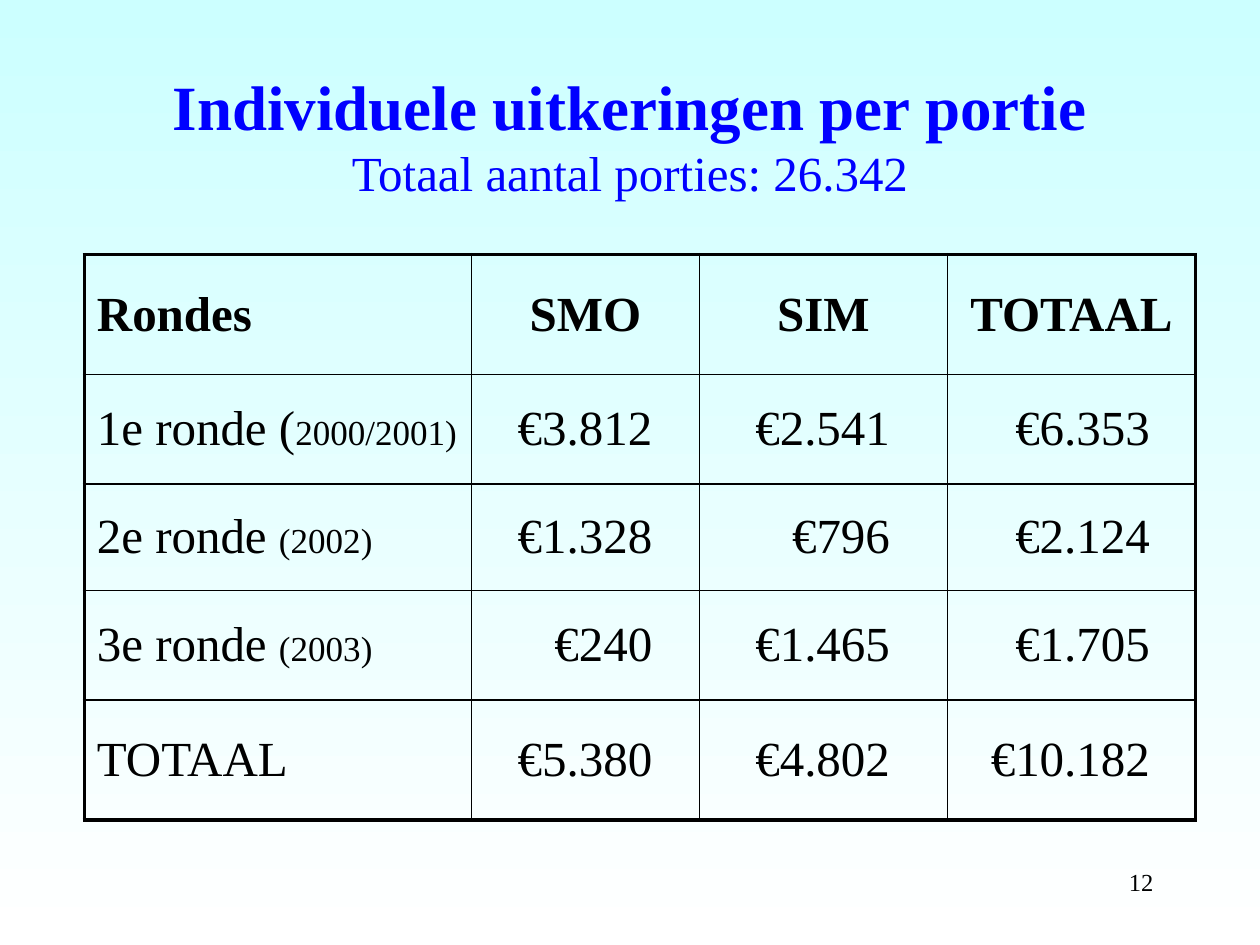
"""Build the slide on individual payouts per portion."""
from dataclasses import dataclass

from lxml import etree
from pptx import Presentation
from pptx.dml.color import RGBColor
from pptx.enum.text import MSO_ANCHOR, PP_ALIGN
from pptx.oxml.ns import qn
from pptx.slide import Slide
from pptx.table import Table, _Cell
from pptx.text.text import _Paragraph, _Run
from pptx.util import Cm, Pt

LEFT, CENTER, RIGHT = PP_ALIGN.LEFT, PP_ALIGN.CENTER, PP_ALIGN.RIGHT
TOP, MIDDLE = MSO_ANCHOR.TOP, MSO_ANCHOR.MIDDLE


@dataclass(frozen=True)
class Theme:
    font: str = "Times New Roman"
    ink: str = "000000"
    title: str = "0000FF"
    sky: str = "CCFFFF"
    ground: str = "FFFFFF"
    title_size: int = 36
    body_size: int = 28
    period_size: int = 20
    number_size: int = 14
    outer_line: float = 2.25
    inner_line: float = 1


@dataclass(frozen=True)
class Column:
    heading: str
    width: float
    right_margin: float
    align: PP_ALIGN
    heading_align: PP_ALIGN = CENTER


@dataclass(frozen=True)
class Round:
    label: str
    period: str
    amounts: tuple[str, ...]


THEME = Theme()
COLUMNS = (
    Column("Rondes", 7.8, 0.25, LEFT, LEFT),
    Column("SMO", 4.6, 0.95, RIGHT),
    Column("SIM", 5, 1.16, RIGHT),
    Column("TOTAAL", 5, 0.92, RIGHT),
)
ROUNDS = (
    Round("1e ronde (", "2000/2001)", ("€3.812", "€2.541", "€6.353")),
    Round("2e ronde ", "(2002)", ("€1.328", "€796", "€2.124")),
    Round("3e ronde ", "(2003)", ("€240", "€1.465", "€1.705")),
    Round("TOTAAL", "", ("€5.380", "€4.802", "€10.182")),
)
ROW_HEIGHTS = (2.42, 2.21, 2.14, 2.21, 2.42)


def style_run(run: _Run, size: int, color: str = THEME.ink, bold: bool = False) -> None:
    """Apply the theme font with a size, colour and weight."""
    run.font.name = THEME.font
    run.font.size = Pt(size)
    run.font.bold = bold
    run.font.color.rgb = RGBColor.from_string(color)


def add_text(slide: Slide, box: tuple[float, ...], text: str,
             align: PP_ALIGN, anchor: MSO_ANCHOR) -> _Paragraph:
    """Add a wrapped text box, measured in centimetres, and return its paragraph."""
    frame = slide.shapes.add_textbox(*map(Cm, box)).text_frame
    frame.word_wrap = True
    frame.vertical_anchor = anchor
    paragraph = frame.paragraphs[0]
    paragraph.text = text
    paragraph.alignment = align
    return paragraph


def draw_borders(cell: _Cell, outer_sides: dict[str, bool]) -> None:
    """Draw the four borders, heavier on the sides at the table's edge."""
    properties = cell._tc.get_or_add_tcPr()
    for index, (side, is_outer) in enumerate(outer_sides.items()):
        width = THEME.outer_line if is_outer else THEME.inner_line
        line = etree.Element(qn(f"a:ln{side}"), w=str(int(Pt(width))))
        fill = etree.SubElement(line, qn("a:solidFill"))
        etree.SubElement(fill, qn("a:srgbClr"), val=THEME.ink)
        properties.insert(index, line)


def fill_cell(table: Table, row: int, col: int, text: str, period: str = "") -> None:
    """Write and style one cell of the payout table."""
    cell, column, is_heading = table.cell(row, col), COLUMNS[col], row == 0
    cell.fill.background()
    cell.vertical_anchor = MIDDLE
    paragraph = cell.text_frame.paragraphs[0]
    paragraph.text = text
    paragraph.alignment = column.heading_align if is_heading else column.align
    if not is_heading:
        cell.margin_right = Cm(column.right_margin)
    style_run(paragraph.runs[0], THEME.body_size, bold=is_heading)
    if period:
        period_run = paragraph.add_run()
        period_run.text = period
        style_run(period_run, THEME.period_size)
    draw_borders(cell, {"L": col == 0, "R": col == len(COLUMNS) - 1,
                        "T": row == 0, "B": row == len(ROUNDS)})


def add_payouts(slide: Slide) -> None:
    """Add the table of payouts per round."""
    table = slide.shapes.add_table(
        len(ROW_HEIGHTS), len(COLUMNS), Cm(1.7), Cm(5.13),
        Cm(sum(column.width for column in COLUMNS)), Cm(sum(ROW_HEIGHTS))).table
    table.first_row = table.horz_banding = False
    for row, height in zip(table.rows, ROW_HEIGHTS):
        row.height = Cm(height)
    for col, column in enumerate(COLUMNS):
        table.columns[col].width = Cm(column.width)
        fill_cell(table, 0, col, column.heading)
    for row, payout in enumerate(ROUNDS, start=1):
        fill_cell(table, row, 0, payout.label, payout.period)
        for col, amount in enumerate(payout.amounts, start=1):
            fill_cell(table, row, col, amount)


def paint_background(slide: Slide) -> None:
    """Fill the background with a gradient running from top to bottom."""
    fill = slide.background.fill
    fill.gradient()
    fill.gradient_angle = 270
    for stop, color in zip(fill.gradient_stops, (THEME.sky, THEME.ground)):
        stop.color.rgb = RGBColor.from_string(color)


def main() -> None:
    """Build and save the presentation."""
    presentation = Presentation()
    presentation.slide_width, presentation.slide_height = Cm(25.4), Cm(19.05)
    slide = presentation.slides.add_slide(presentation.slide_layouts[6])
    paint_background(slide)
    number = add_text(slide, (18.2, 17.35, 5.3, 1.27), "12", RIGHT, TOP)
    style_run(number.runs[0], THEME.number_size)
    title = add_text(
        slide, (1.9, 1.12, 21.6, 3.18),
        "Individuele uitkeringen per portie\vTotaal aantal porties: 26.342",
        CENTER, MIDDLE)
    heading, subheading = title.runs
    style_run(heading, THEME.title_size, THEME.title, bold=True)
    style_run(subheading, THEME.body_size, THEME.title)
    add_payouts(slide)
    presentation.save("out.pptx")


if __name__ == "__main__":
    main()
